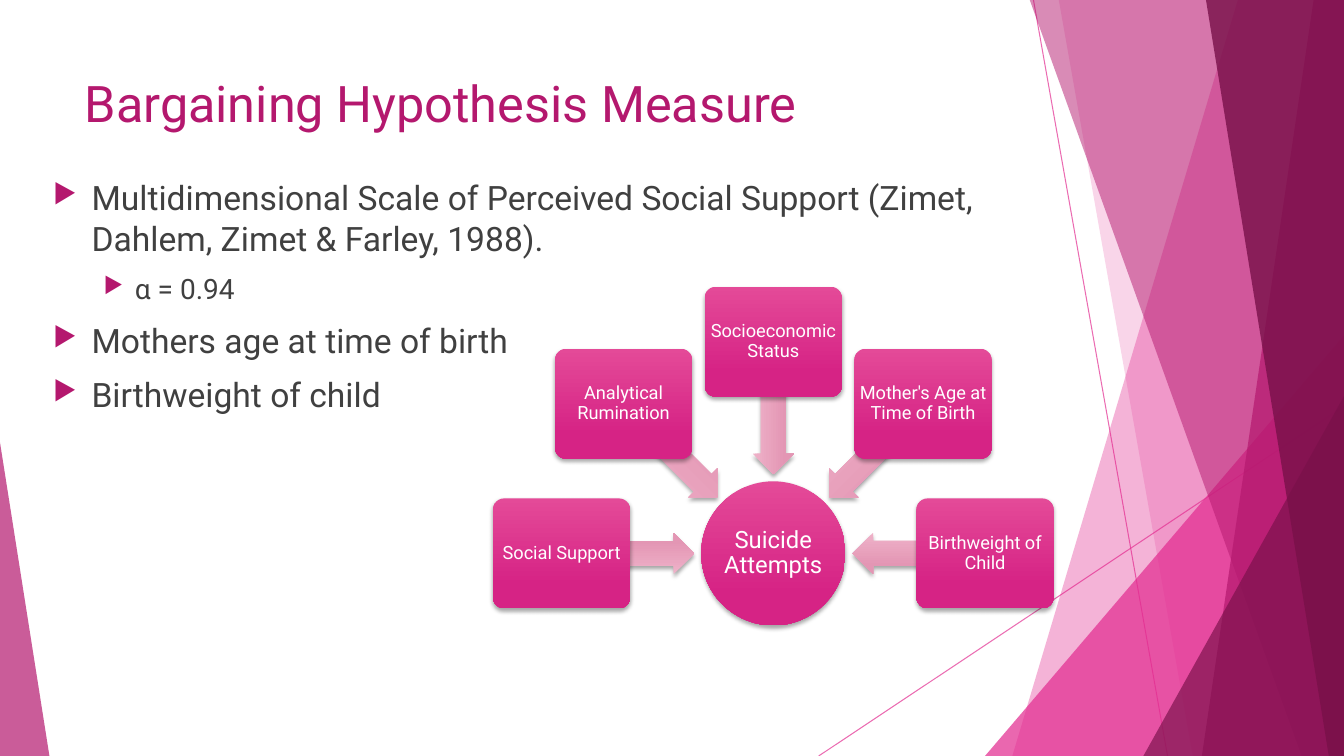
import math

from lxml import etree
from pptx import Presentation
from pptx.dml.color import RGBColor
from pptx.enum.shapes import MSO_CONNECTOR, MSO_SHAPE
from pptx.enum.text import MSO_ANCHOR, MSO_AUTO_SIZE, PP_ALIGN
from pptx.oxml.ns import qn
from pptx.util import Inches, Pt

STRAIGHT = MSO_CONNECTOR.STRAIGHT
TRIANGLE = MSO_SHAPE.ISOSCELES_TRIANGLE
ELLIPSE = MSO_SHAPE.OVAL
ROUNDED = MSO_SHAPE.ROUNDED_RECTANGLE
LEFT_ARROW = MSO_SHAPE.LEFT_ARROW
TOP, MIDDLE = MSO_ANCHOR.TOP, MSO_ANCHOR.MIDDLE
LEFT, CENTER = PP_ALIGN.LEFT, PP_ALIGN.CENTER
NO_FIT = MSO_AUTO_SIZE.NONE

FONT = "Roboto"
COLORS = {
    "pink": "E32D91",
    "magenta": "B4186E",
    "plum": "781049",
    "body": "404040",
    "white": "FFFFFF",
    "shadow": "000000",
    "node_top": "E44A98",
    "node_bottom": "D62385",
    "arrow_top": "EFB2C9",
    "arrow_bottom": "E396B4",
}

BOTTOM = 7.5
EDGE = 13.33
HUB_X, HUB_Y = 7.67, 5.49
HUB_SIZE = 1.43
NODE_RADIUS, NODE_WIDTH, NODE_HEIGHT = 2.1, 1.36, 1.09
ARROW_RADIUS, ARROW_LENGTH, ARROW_HEIGHT = 1.44, 1.31, 0.41
FACTORS = [
    "Social Support",
    "Analytical Rumination",
    "Socioeconomic Status",
    "Mother's Age at Time of Birth",
    "Birthweight of Child",
]
MEASURES = [
    (0, "Multidimensional Scale of Perceived Social Support (Zimet, Dahlem, Zimet & Farley, 1988)."),
    (1, "α = 0.94"),
    (0, "Mothers age at time of birth"),
    (0, "Birthweight of child"),
]
LEVELS = [(24, 0.38, 0.38), (20, 0.81, 0.31)]


def rgb(name):
    return RGBColor.from_string(COLORS[name])


def add_alpha(parent, percent):
    for color in parent.iter(qn("a:srgbClr")):
        etree.SubElement(color, qn("a:alpha")).set("val", str(percent * 1000))


def paint_facet(facet, color, alpha):
    facet.shadow.inherit = False
    facet.fill.solid()
    facet.fill.fore_color.rgb = rgb(color)
    facet.line.fill.background()
    add_alpha(facet._element.spPr, alpha)


def add_facet(slide, top_left, top_right, bottom_right, bottom_left, color, alpha):
    corners = [(top_left, -0.01), (top_right, -0.01), (bottom_right, BOTTOM), (bottom_left, BOTTOM)]
    points = [(Inches(x), Inches(y)) for x, y in corners]
    builder = slide.shapes.build_freeform(*points[0], scale=1.0)
    builder.add_line_segments(points[1:], close=True)
    paint_facet(builder.convert_to_shape(), color, alpha)


def add_corner(slide, left, top, width, apex, color, alpha):
    corner = slide.shapes.add_shape(
        TRIANGLE, Inches(left), Inches(top), Inches(width), Inches(BOTTOM - top))
    corner.adjustments[0] = apex
    paint_facet(corner, color, alpha)


def add_ray(slide, x1, y1, x2, y2):
    ray = slide.shapes.add_connector(STRAIGHT, Inches(x1), Inches(y1), Inches(x2), Inches(y2))
    ray.line.color.rgb = rgb("pink")
    ray.line.width = Pt(0.75)
    properties = ray._element.spPr
    add_alpha(properties, 70)
    etree.SubElement(properties, qn("a:effectLst"))


def write(paragraph, text, size, color, align=LEFT, line_spacing=1.0, before=0):
    paragraph.alignment = align
    paragraph.line_spacing = line_spacing
    paragraph.space_before = Pt(before)
    run = paragraph.add_run()
    run.text = text
    run.font.name = FONT
    run.font.size = Pt(size)
    run.font.color.rgb = rgb(color)


def add_bullet(paragraph, indent, hanging):
    properties = paragraph._p.get_or_add_pPr()
    properties.set("marL", str(Inches(indent)))
    properties.set("indent", str(-Inches(hanging)))
    color = etree.SubElement(properties, qn("a:buClr"))
    etree.SubElement(color, qn("a:srgbClr")).set("val", COLORS["magenta"])
    etree.SubElement(properties, qn("a:buSzPct")).set("val", "80000")
    etree.SubElement(properties, qn("a:buChar")).set("char", "▶")


def add_soft_shadow(shape):
    shape.shadow.inherit = False
    effects = shape._element.spPr.find(qn("a:effectLst"))
    shadow = etree.SubElement(effects, qn("a:outerShdw"))
    for key, value in (("blurRad", Pt(3)), ("dist", Pt(2)), ("dir", 5400000), ("rotWithShape", 0)):
        shadow.set(key, str(value))
    etree.SubElement(shadow, qn("a:srgbClr")).set("val", COLORS["shadow"])
    add_alpha(effects, 35)


def add_glossy(slide, kind, center_x, center_y, width, height, tone):
    shape = slide.shapes.add_shape(
        kind, Inches(center_x - width / 2), Inches(center_y - height / 2),
        Inches(width), Inches(height))
    shape.fill.gradient()
    shape.fill.gradient_angle = 270
    stops = shape.fill.gradient_stops
    for stop, position, part in zip(stops, (0, 0.78), ("top", "bottom")):
        stop.position = position
        stop.color.rgb = rgb(f"{tone}_{part}")
    shape.line.fill.background()
    add_soft_shadow(shape)
    return shape


def label(shape, text, size):
    frame = shape.text_frame
    frame.word_wrap = True
    frame.vertical_anchor = MIDDLE
    frame.margin_left = frame.margin_right = Inches(0)
    frame.margin_top = frame.margin_bottom = Inches(0)
    write(frame.paragraphs[0], text, size, "white", align=CENTER, line_spacing=0.9)


def add_backdrop(slide):
    add_ray(slide, 10.25, 0, 11.58, BOTTOM)
    add_ray(slide, EDGE, 4.03, 8.12, BOTTOM)
    add_facet(slide, 12.28, EDGE, EDGE, 10.04, "pink", 36)
    add_facet(slide, 10.5, EDGE, EDGE, 11.83, "pink", 20)
    add_corner(slide, 9.77, 3.33, 3.56, 1, "pink", 72)
    add_facet(slide, 10.21, EDGE, EDGE, 12.91, "magenta", 50)
    add_facet(slide, 13.03, EDGE, EDGE, 11.92, "magenta", 70)
    add_facet(slide, 11.96, EDGE, EDGE, 13.18, "plum", 80)
    add_corner(slide, 11.34, 3.93, 1.99, 1, "plum", 66)
    add_corner(slide, 0, 4.39, 0.49, 0, "magenta", 70)


def add_title(slide, text):
    title = slide.shapes.title
    title.left, title.top = Inches(0.74), Inches(0.67)
    title.width, title.height = Inches(9.4), Inches(1.44)
    title.text_frame.vertical_anchor = TOP
    title.text_frame.auto_size = NO_FIT
    write(title.text_frame.paragraphs[0], text, 36, "magenta")


def add_measures(slide):
    frame = slide.shapes.add_textbox(
        Inches(0.43), Inches(1.71), Inches(9.4), Inches(4.24)).text_frame
    frame.word_wrap = True
    for index, (level, text) in enumerate(MEASURES):
        paragraph = frame.add_paragraph() if index else frame.paragraphs[0]
        size, indent, hanging = LEVELS[level]
        paragraph.level = level
        write(paragraph, text, size, "body", before=10)
        add_bullet(paragraph, indent, hanging)


def add_factor(slide, text, angle):
    across, down = math.cos(math.radians(angle)), math.sin(math.radians(angle))
    arrow = add_glossy(slide, LEFT_ARROW, HUB_X + ARROW_RADIUS * across,
                       HUB_Y + ARROW_RADIUS * down, ARROW_LENGTH, ARROW_HEIGHT, "arrow")
    arrow.adjustments[0], arrow.adjustments[1] = 0.6, 0.5
    arrow.rotation = angle % 360
    node = add_glossy(slide, ROUNDED, HUB_X + NODE_RADIUS * across,
                      HUB_Y + NODE_RADIUS * down, NODE_WIDTH, NODE_HEIGHT, "node")
    node.adjustments[0] = 0.1
    label(node, text, 13)


def main():
    deck = Presentation()
    deck.slide_width, deck.slide_height = Inches(EDGE), Inches(BOTTOM)
    slide = deck.slides.add_slide(deck.slide_layouts[5])
    add_backdrop(slide)
    add_title(slide, "Bargaining Hypothesis Measure")
    add_measures(slide)
    hub = add_glossy(slide, ELLIPSE, HUB_X, HUB_Y, HUB_SIZE, HUB_SIZE, "node")
    label(hub, "Suicide Attempts", 17)
    for index, factor in enumerate(FACTORS):
        add_factor(slide, factor, 180 + 45 * index)
    deck.save("out.pptx")


if __name__ == "__main__":
    main()
